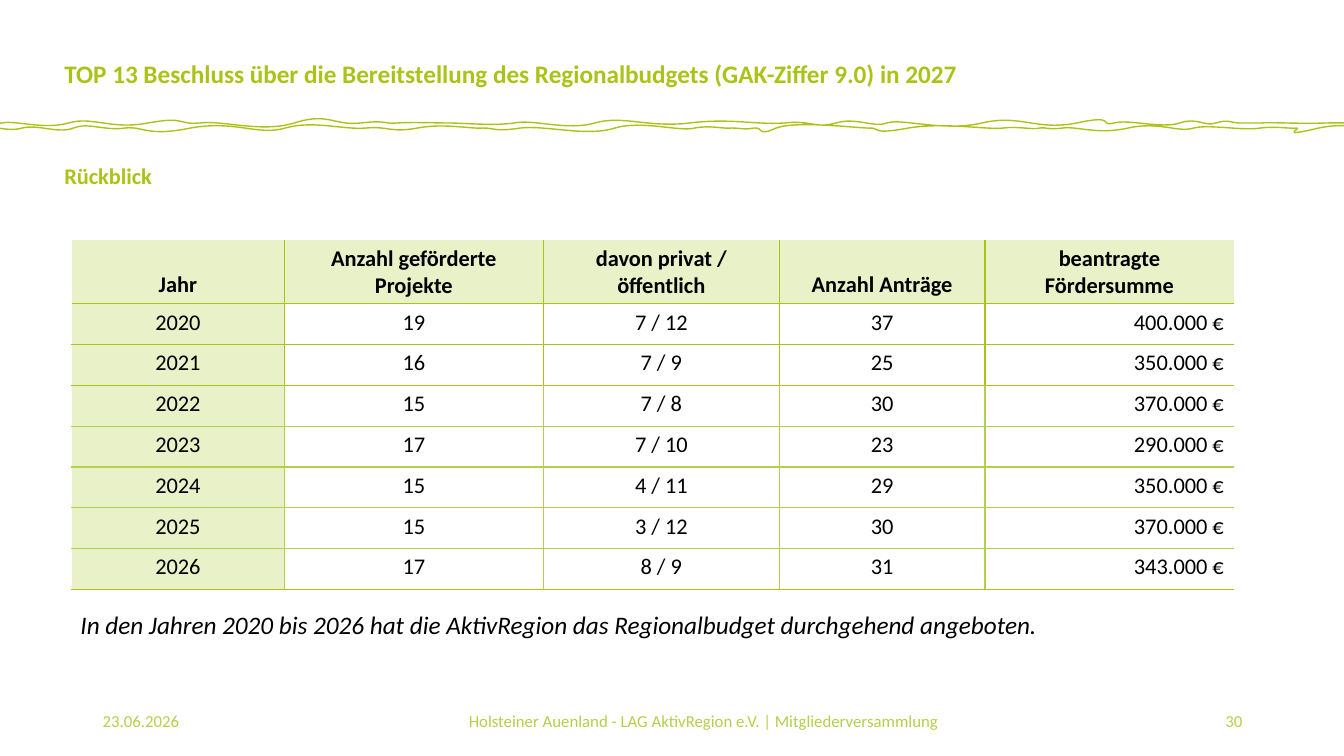
from dataclasses import dataclass
from lxml.etree import SubElement
from pptx import Presentation
from pptx.dml.color import RGBColor as RGB
from pptx.enum.text import MSO_ANCHOR as Anchor, PP_ALIGN as Align
from pptx.oxml.ns import qn
from pptx.util import Pt

# Content
TITLE = "TOP 13 Beschluss über die Bereitstellung des Regionalbudgets (GAK-Ziffer 9.0) in 2027"
REVIEW = "Rückblick"
NOTE = "In den Jahren 2020 bis 2026 hat die AktivRegion das Regionalbudget durchgehend angeboten."
DATE = "23.06.2026"
FOOT = "Holsteiner Auenland - LAG AktivRegion e.V. | Mitgliederversammlung"
PAGE = "30"
ROWS = [
    ("Jahr", "Anzahl geförderte Projekte", "davon privat / öffentlich",
     "Anzahl Anträge", "beantragte Fördersumme"),
    ("2020", "19", "7 / 12", "37", "400.000 €"),
    ("2021", "16", "7 / 9", "25", "350.000 €"),
    ("2022", "15", "7 / 8", "30", "370.000 €"),
    ("2023", "17", "7 / 10", "23", "290.000 €"),
    ("2024", "15", "4 / 11", "29", "350.000 €"),
    ("2025", "15", "3 / 12", "30", "370.000 €"),
    ("2026", "17", "8 / 9", "31", "343.000 €"),
]
WIDTHS = [211, 257, 234, 204, 247]

# Wave: each curve is two control points and the x of its end on the base line
LEFT, RIGHT, UPPER, LOWER = -34, 1402, 122, 127
CREST = [
    (-25, 119, -11, 124, 2), (15, 119, 43, 129, 68), (92, 115, 109, 129, 147),
    (185, 115, 176, 124, 198), (221, 119, 259, 132, 292), (326, 111, 331, 125, 358),
    (384, 119, 379, 123, 394), (409, 121, 431, 122, 445), (459, 122, 491, 125, 510),
    (530, 118, 562, 130, 590), (618, 114, 643, 127, 684), (725, 117, 750, 124, 778),
    (806, 119, 808, 128, 829), (850, 116, 866, 127, 880), (894, 117, 935, 131, 974),
    (1013, 113, 1027, 130, 1068), (1109, 113, 1089, 126, 1105),
    (1120, 118, 1152, 128, 1170), (1188, 116, 1195, 126, 1206),
    (1218, 118, 1222, 122, 1229), (1235, 122, 1245, 122, 1251),
    (1257, 121, 1289, 123, 1316), (1344, 121, 1374, 125, 1402),
]
TROUGH = [
    (1403, 124, 1402, 126, 1402),
    (1382, 138, 1350, 118, 1308), (1266, 137, 1292, 127, 1286),
    (1280, 128, 1267, 125, 1250), (1232, 130, 1200, 123, 1184),
    (1168, 132, 1150, 120, 1119), (1088, 134, 1069, 125, 1054),
    (1038, 129, 1039, 126, 1031), (1024, 129, 1010, 125, 995),
    (980, 129, 937, 121, 901), (864, 134, 872, 127, 864), (857, 128, 791, 119, 770),
    (750, 136, 758, 126, 748), (738, 129, 735, 127, 726), (717, 128, 705, 124, 689),
    (674, 131, 637, 119, 610), (582, 136, 541, 124, 516), (490, 131, 492, 127, 479),
    (466, 128, 441, 122, 414), (387, 132, 386, 125, 363), (340, 129, 311, 119, 283),
    (256, 135, 234, 119, 189), (145, 136, 143, 125, 124), (104, 130, 87, 121, 73),
    (58, 133, 38, 123, 22), (5, 132, -13, 121, -34),
]
BACK = [(-35, 126, -34, 124, -34)]


@dataclass
class Theme:
    font: str = "Calibri"
    green: str = "ADC217"
    light: str = "B3D04A"
    pale: str = "E8F1C7"
    white: str = "FFFFFF"
    black: str = "000000"
    head: int = 18
    body: int = 16
    small: int = 12


T = Theme()
PX = 9144  # 100 px to the inch

deck = Presentation()
deck.slide_width, deck.slide_height = 1333 * PX, 750 * PX
slide = deck.slides.add_slide(deck.slide_layouts[6])


def write(frame, text, size, color, align=Align.LEFT, bold=False, italic=False):
    para = frame.paragraphs[0]
    para.alignment = align
    run = para.add_run()
    run.text = text
    font = run.font
    font.name, font.size, font.bold, font.italic = T.font, Pt(size), bold, italic
    font.color.rgb = RGB.from_string(color)
    return para


def label(box, text, size, color, anchor=Anchor.TOP, **style):
    frame = slide.shapes.add_textbox(*(n * PX for n in box)).text_frame
    frame.word_wrap = True
    frame.vertical_anchor = anchor
    return write(frame, text, size, color, **style)


def bend(trail, base, curves):
    """Add cubic curves that end on one base line."""
    for x1, y1, x2, y2, x3 in curves:
        curve = SubElement(trail, qn("a:cubicBezTo"))
        for x, y in ((x1, y1), (x2, y2), (x3, base)):
            SubElement(curve, qn("a:pt"), x=str((x - LEFT) * PX), y=str((y - UPPER) * PX))


def border(cell, side, color):
    line = SubElement(cell._tc.get_or_add_tcPr(), qn("a:ln" + side), w=str(Pt(1)))
    if color:
        fill = SubElement(line, qn("a:solidFill"))
        SubElement(fill, qn("a:srgbClr"), val=color)
    else:
        SubElement(line, qn("a:noFill"))


# Heading and subheading
label((54, 40, 1187, 69), TITLE, T.head, T.green, Anchor.MIDDLE, bold=True).line_spacing = 0.9
label((54, 159, 1156, 516), REVIEW, T.body, T.green, bold=True).line_spacing = 0.9

# Wavy rule: a straight band gives the frame, curves replace its sides
pen = slide.shapes.build_freeform(LEFT * PX, UPPER * PX)
pen.add_line_segments([(RIGHT * PX, LOWER * PX)], close=False)
wave = pen.convert_to_shape()
trail = next(wave._element.iter(qn("a:path")))
trail.remove(trail.find(qn("a:lnTo")))
for base, curves in ((UPPER, CREST), (LOWER, TROUGH), (UPPER, BACK)):
    bend(trail, base, curves)
SubElement(trail, qn("a:close"))
wave.shadow.inherit = False
wave.fill.background()
wave.line.color.rgb = RGB.from_string(T.green)
wave.line.width = Pt(1)

# Table
TALL = 324
last_row, last_col = len(ROWS) - 1, len(WIDTHS) - 1
grid = slide.shapes.add_table(len(ROWS), len(WIDTHS), 71 * PX, 238 * PX,
                              sum(WIDTHS) * PX, TALL * PX).table
grid.first_row = grid.horz_banding = False
for col, wide in zip(grid.columns, WIDTHS):
    col.width = wide * PX
for r, row in enumerate(ROWS):
    tone = T.green if r < 3 else T.light
    above = T.green if r <= 3 else T.light
    below = T.green if r == last_row else tone
    for c, text in enumerate(row):
        cell = grid.cell(r, c)
        head = r == 0
        cell.vertical_anchor = Anchor.BOTTOM if head else Anchor.TOP
        align = Align.RIGHT if c == last_col and not head else Align.CENTER
        write(cell.text_frame, text, T.body, T.black, align, bold=head)
        edge = None if head else T.white
        border(cell, "L", tone if c else edge)
        border(cell, "R", tone if c < last_col else None)
        border(cell, "T", None if head else above)
        border(cell, "B", below)
        if head or c == 0:
            cell.fill.solid()
            cell.fill.fore_color.rgb = RGB.from_string(T.pale)
        else:
            cell.fill.background()

# Note and footer
label((70, 600, 1156, 40), NOTE, T.head, T.black, italic=True)
for left, wide, text, align in [(942, 300, PAGE, Align.RIGHT),
                                (186, 1024, FOOT, Align.CENTER),
                                (92, 300, DATE, Align.LEFT)]:
    label((left, 695, wide, 40), text, T.small, T.light, Anchor.MIDDLE, align=align)

deck.save("out.pptx")
